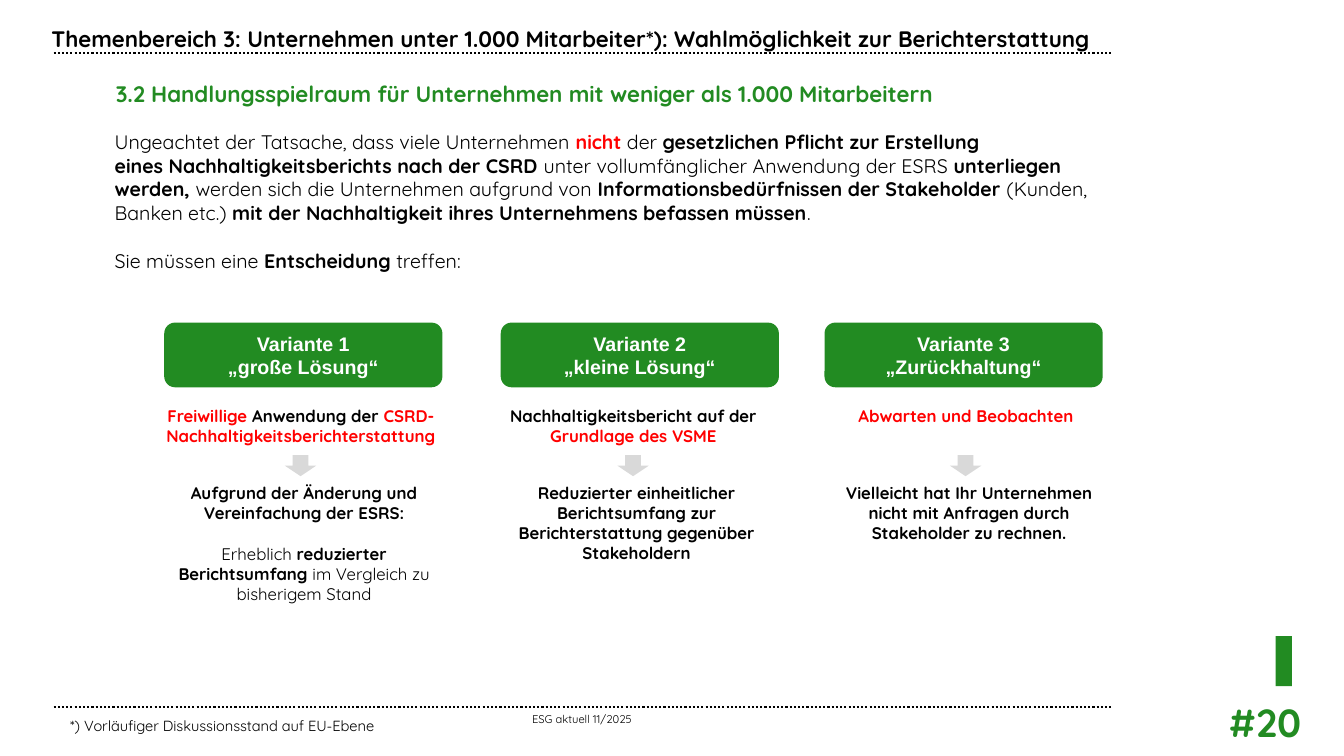
"""Build the slide on reporting options for companies below 1,000 employees."""
import pptx
import pptx.dml.color
import pptx.enum.dml
import pptx.enum.shapes
import pptx.enum.text
import pptx.oxml.ns
import pptx.util
from lxml import etree

Cm = pptx.util.Cm
Shape = pptx.enum.shapes.MSO_SHAPE
Align = pptx.enum.text.PP_ALIGN
Anchor = pptx.enum.text.MSO_ANCHOR

GREEN, RED, BLACK, WHITE, GREY = "228B22", "FF0000", "000000", "FFFFFF", "D9D9D9"
PLAIN, BOLD = (BLACK, False), (BLACK, True)
ALERT, ACCENT, INVERSE = (RED, True), (GREEN, True), (WHITE, True)

TITLE = "Themenbereich 3: Unternehmen unter 1.000 Mitarbeiter*): Wahlmöglichkeit zur Berichterstattung"
SUBTITLE = "3.2 Handlungsspielraum für Unternehmen mit weniger als 1.000 Mitarbeitern"
INTRO = [
    [("Ungeachtet der Tatsache, dass viele Unternehmen ", PLAIN),
     ("nicht", ALERT),
     (" der ", PLAIN),
     ("gesetzlichen Pflicht zur Erstellung\neines Nachhaltigkeitsberichts nach der CSRD ", BOLD),
     ("unter vollumfänglicher Anwendung der ESRS ", PLAIN),
     ("unterliegen werden, ", BOLD),
     ("werden sich die Unternehmen aufgrund von ", PLAIN),
     ("Informationsbedürfnissen der Stakeholder ", BOLD),
     ("(Kunden, Banken etc.) ", PLAIN),
     ("mit der Nachhaltigkeit ihres Unternehmens befassen müssen", BOLD),
     (".", PLAIN)],
    [("Sie müssen eine ", PLAIN), ("Entscheidung", BOLD), (" treffen:", PLAIN)],
]
VARIANTS = [
    {"left": 4.14,
     "name": "„große Lösung“",
     "choice": [[("Freiwillige", ALERT), (" Anwendung der ", BOLD),
                 ("CSRD-Nachhaltigkeitsberichterstattung", ALERT)]],
     "result": [[("Aufgrund der Änderung und Vereinfachung der ESRS:", BOLD)],
                [("Erheblich ", PLAIN), ("reduzierter Berichtsumfang ", BOLD),
                 ("im Vergleich zu bisherigem Stand", PLAIN)]]},
    {"left": 12.62,
     "name": "„kleine Lösung“",
     "choice": [[("Nachhaltigkeitsbericht auf der ", BOLD), ("Grundlage des VSME", ALERT)]],
     "result": [[("Reduzierter einheitlicher Berichtsumfang zur "
                  "Berichterstattung gegenüber Stakeholdern", BOLD)]]},
    {"left": 20.78,
     "name": "„Zurückhaltung“",
     "choice": [[("Abwarten und Beobachten", ALERT)]],
     "result": [[("Vielleicht hat Ihr Unternehmen nicht mit Anfragen durch "
                  "Stakeholder zu rechnen.", BOLD)]]},
]
FOOTER = "ESG aktuell 11/2025"
FOOTNOTE = "*) Vorläufiger Diskussionsstand auf EU-Ebene"
PAGE_NUMBER = "#20"
RULE_LEFT, RULE_RIGHT, RULE_TOPS = 1.35, 28.04, (1.33, 17.81)
COLUMN_PITCH = 8.38


def color(value):
    return pptx.dml.color.RGBColor.from_string(value)


def write(box, paragraphs, size, align=Align.LEFT, font="Quicksand", gap=0, anchor=Anchor.TOP):
    frame = box.text_frame
    frame.word_wrap = True
    frame.auto_size = pptx.enum.text.MSO_AUTO_SIZE.NONE
    frame.vertical_anchor = anchor
    for index, spans in enumerate(paragraphs):
        para = frame.add_paragraph() if index else frame.paragraphs[0]
        para.alignment = align
        para.space_before = pptx.util.Pt(gap if index else 0)
        for text, (ink, bold) in spans:
            for number, line in enumerate(text.split("\n")):
                if number:
                    para.add_line_break()
                span = para.add_run()
                span.text = line
                span.font.name = font
                span.font.size = pptx.util.Pt(size)
                span.font.bold = bold
                span.font.color.rgb = color(ink)


def add_text(page, place, paragraphs, size, inset=True, **style):
    box = page.shapes.add_textbox(*map(Cm, place))
    if not inset:
        remove_insets(box.text_frame)
    write(box, paragraphs, size, **style)


def remove_insets(frame):
    frame.margin_left = frame.margin_right = frame.margin_top = frame.margin_bottom = 0


def add_block(page, kind, place, fill):
    block = page.shapes.add_shape(kind, *map(Cm, place))
    block.shadow.inherit = False
    block.fill.solid()
    block.fill.fore_color.rgb = color(fill)
    block.line.fill.background()
    return block


def add_rule(page, top):
    rule = page.shapes.add_connector(
        pptx.enum.shapes.MSO_CONNECTOR.STRAIGHT, Cm(RULE_LEFT), Cm(top), Cm(RULE_RIGHT), Cm(top))
    rule.line.color.rgb = color(BLACK)
    rule.line.width = pptx.util.Pt(1.5)
    rule.line.dash_style = pptx.enum.dml.MSO_LINE.ROUND_DOT
    etree.SubElement(rule.element.spPr, pptx.oxml.ns.qn("a:effectLst"))


def add_variant(page, index, variant):
    shift = index * COLUMN_PITCH
    button = add_block(page, Shape.ROUNDED_RECTANGLE, (variant["left"], 8.13, 7.01, 1.63), GREEN)
    label = [[(f"Variante {index + 1}", INVERSE)], [(variant["name"], INVERSE)]]
    write(button, label, 14, Align.CENTER, "Arial", anchor=Anchor.MIDDLE)
    add_text(page, (3.76 + shift, 10.1, 7.65, 1.27), variant["choice"], 12, align=Align.CENTER)
    add_block(page, Shape.DOWN_ARROW, (7.18 + shift, 11.47, 0.79, 0.53), GREY)
    add_text(page, (3.84 + shift, 12.03, 7.65, 3.33), variant["result"], 12,
             align=Align.CENTER, gap=15)


def main():
    deck = pptx.Presentation()
    deck.slide_width, deck.slide_height = Cm(33.87), Cm(19.05)
    page = deck.slides.add_slide(deck.slide_layouts[5])
    for top in RULE_TOPS:
        add_rule(page, top)

    title = page.shapes.title
    title.left, title.top, title.width, title.height = map(Cm, (1.04, 0.51, 27.81, 0.94))
    write(title, [[(TITLE, BOLD)]], 16)
    add_text(page, (2.92, 2.01, 28.4, 0.89), [[(SUBTITLE, ACCENT)]], 16, inset=False)
    add_text(page, (2.64, 3.15, 25.3, 3.84), INTRO, 14, gap=17.5)

    for index, variant in enumerate(VARIANTS):
        add_variant(page, index, variant)

    add_block(page, Shape.RECTANGLE, (32.15, 16.03, 0.41, 1.26), GREEN)
    add_text(page, (28.93, 17.48, 4.11, 1.45), [[(PAGE_NUMBER, ACCENT)]], 28, align=Align.RIGHT)
    add_text(page, (1.32, 17.96, 26.7, 0.33), [[(FOOTER, PLAIN)]], 8, inset=False,
             align=Align.CENTER, anchor=Anchor.MIDDLE)
    add_text(page, (1.52, 17.93, 11.4, 0.74), [[(FOOTNOTE, PLAIN)]], 10.5)
    deck.save("out.pptx")


if __name__ == "__main__":
    main()
